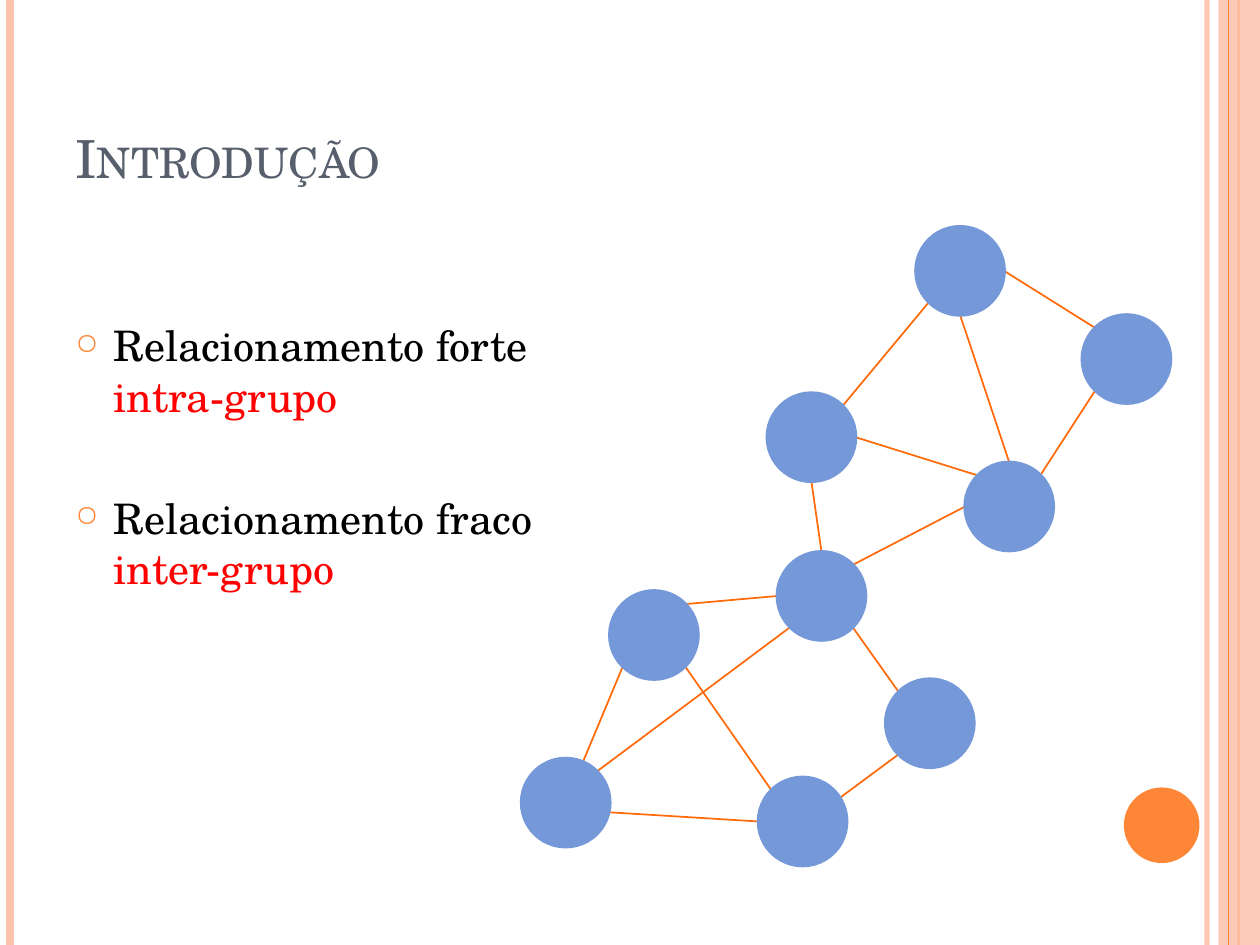
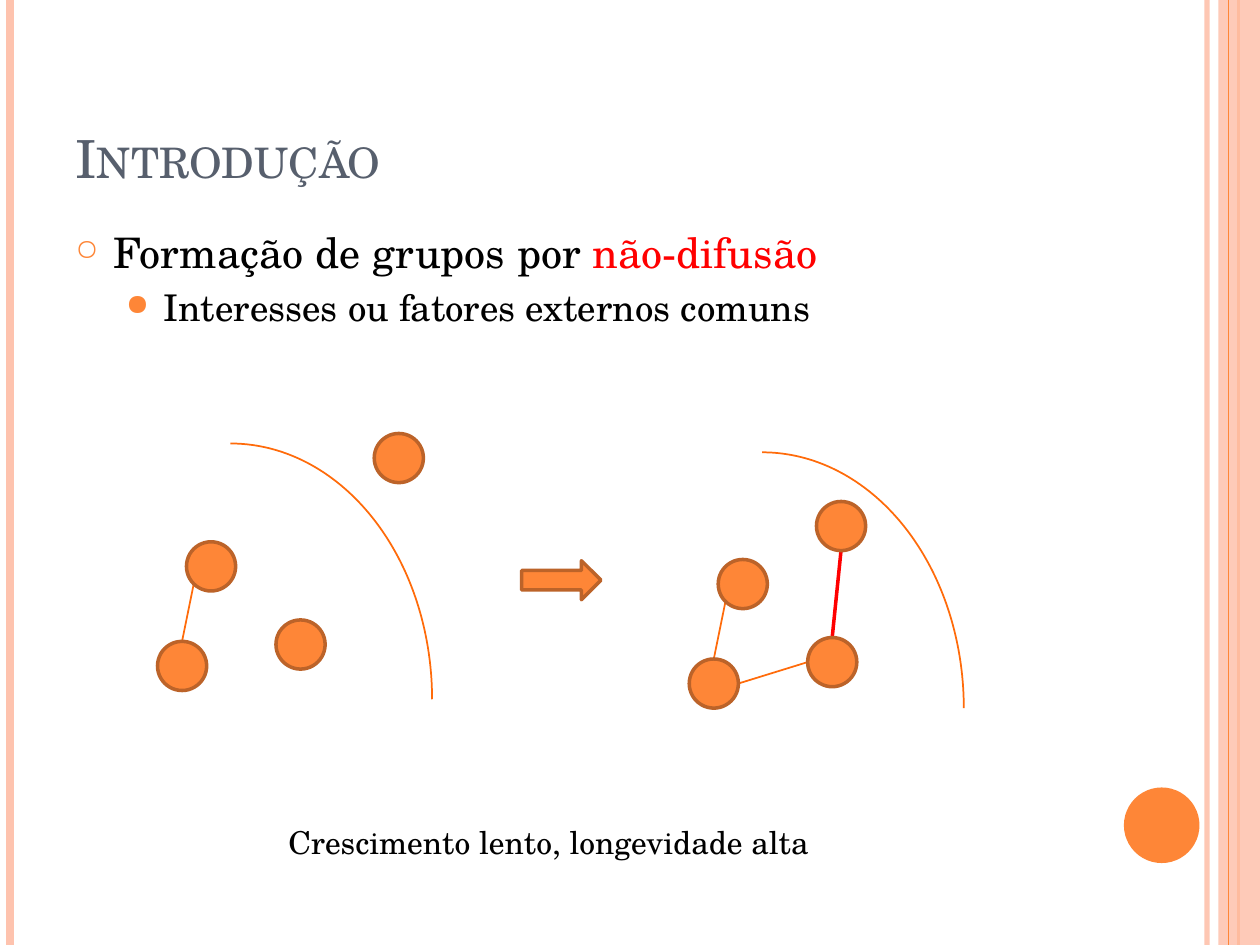
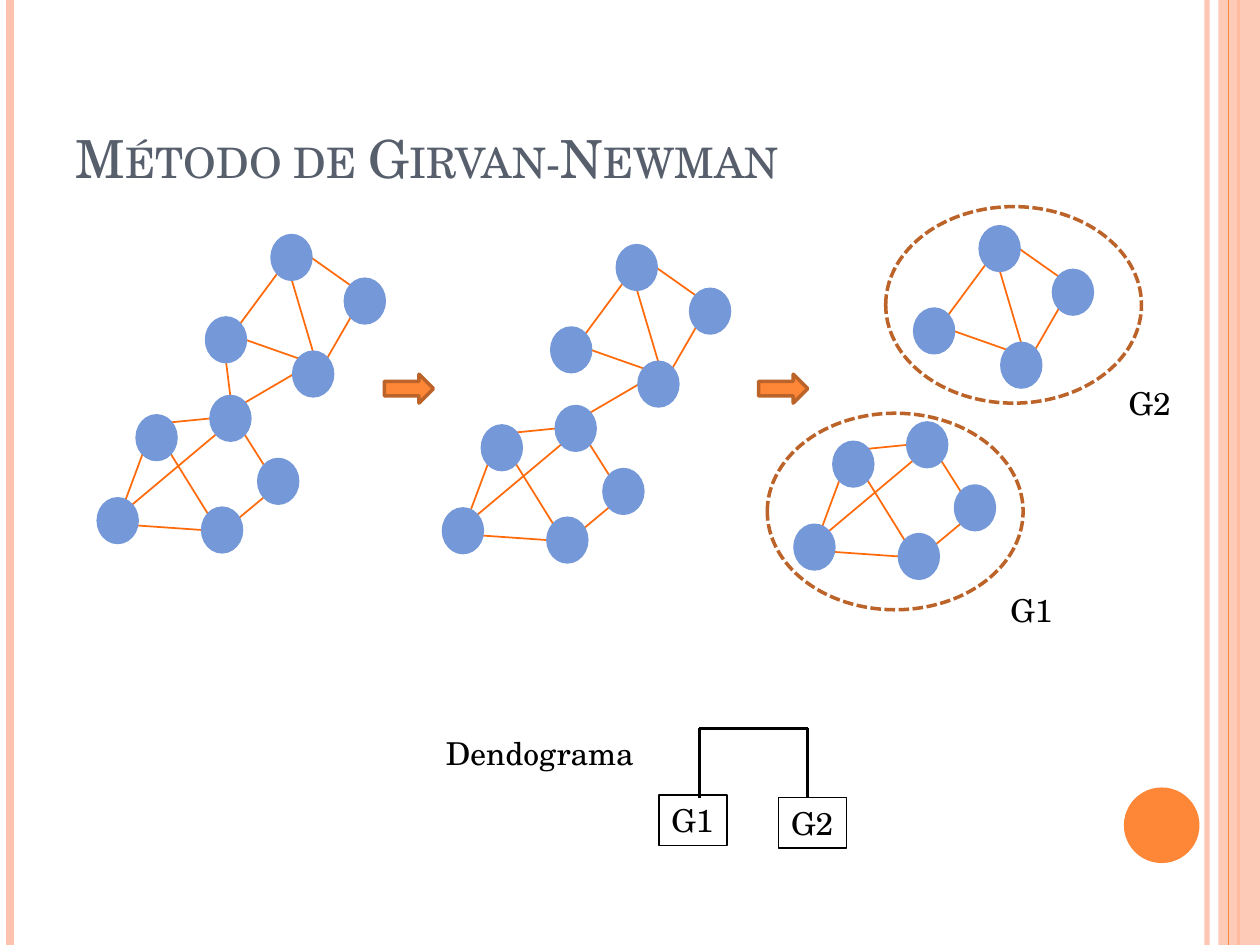
from pptx import Presentation, util as u
from pptx.dml import color as c
from pptx.enum import dml, shapes as kinds, text as texts
from pptx.oxml import ns, xmlchemy as xml

FONT = "TeX Gyre Schola"
ORANGE, DARK_ORANGE, EDGE_ORANGE, PEACH = "FE8637", "BC6329", "FF6B0A", "FEC3AE"
BLUE, SLATE, RED, BLACK = "7598D9", "575F6D", "FF0000", "000000"

SITES = {
    "N": (0.5, 0), "NE": (0.85, 0.15), "E": (1, 0.5), "SE": (0.85, 0.85),
    "S": (0.5, 1), "SW": (0.15, 0.85), "W": (0, 0.5), "NW": (0.15, 0.15),
    "NNE": (0.67, 0.1), "ESE": (1, 0.61), "inside": (0.56, 0.5),
}

NETWORK_SIZE = (5.15, 5.07)
NETWORK_NODE = 0.7
GROUP_1 = {"hub": (2.03, 2.58), "right": (2.89, 3.59), "upper": (0.7, 2.89),
           "lower": (0, 4.22), "bottom": (1.88, 4.37)}
GROUP_2 = {"west": (1.95, 1.32), "south": (3.52, 1.87),
           "north": (3.13, 0), "east": (4.45, 0.7)}
EDGES_1 = [
    ("upper", "SE", "bottom", "NW"), ("lower", "ESE", "bottom", "W"),
    ("upper", "NE", "hub", "W"), ("hub", "SE", "right", "NW"),
    ("bottom", "inside", "right", "SW"), ("upper", "SW", "lower", "NNE"),
    ("lower", "NE", "hub", "SW"),
]
EDGES_2 = [
    ("west", "NE", "north", "SW"), ("south", "N", "north", "S"),
    ("west", "E", "south", "NW"), ("north", "E", "east", "NW"),
    ("south", "NE", "east", "SW"),
]
STRONG_BRIDGE = ("hub", "NE", "south", "W")
WEAK_BRIDGE = ("west", "S", "hub", "N")


def rgb(value):
    return c.RGBColor.from_string(value)


def inches(values):
    return [u.Inches(value) for value in values]


def add_xml(parent, tag, **attributes):
    child = xml.OxmlElement(tag)
    for name, value in attributes.items():
        child.set(name, str(value))
    parent.append(child)
    return child


def set_alpha(shape, percent):
    for color in shape.element.spPr.iter(ns.qn("a:srgbClr")):
        add_xml(color, "a:alpha", val=percent * 1000)


def add_shape(container, kind, box, fill=None, line=None, width=2, dash=None):
    shape = container.add_shape(kind, *inches(box))
    shape.shadow.inherit = False
    if fill:
        shape.fill.solid()
        shape.fill.fore_color.rgb = rgb(fill)
    else:
        shape.fill.background()
    if line:
        shape.line.color.rgb = rgb(line)
        shape.line.width = u.Pt(width)
        if dash:
            shape.line.dash_style = dash
    else:
        shape.line.fill.background()
    return shape


def add_line(container, start, end, color=EDGE_ORANGE, width=1):
    connector = container.add_connector(
        kinds.MSO_CONNECTOR.STRAIGHT, *inches((*start, *end)))
    connector.line.color.rgb = rgb(color)
    connector.line.width = u.Pt(width)
    add_xml(connector.element.spPr, "a:effectLst")
    return connector


def write(paragraph, content, size=18, color=BLACK, small_caps=False):
    run = paragraph.add_run()
    run.text = content
    run.font.name = FONT
    run.font.size = u.Pt(size)
    run.font.color.rgb = rgb(color)
    if small_caps:
        run.font._element.set("cap", "small")


def add_label(slide, box, content, line=None):
    label = slide.shapes.add_textbox(*inches(box))
    label.text_frame.word_wrap = False
    label.text_frame.auto_size = texts.MSO_AUTO_SIZE.SHAPE_TO_FIT_TEXT
    write(label.text_frame.paragraphs[0], content)
    if line:
        label.line.color.rgb = rgb(line)
        label.line.width = u.Pt(0.75)


def add_bullets(slide, box, bullets):
    frame = slide.shapes.add_textbox(*inches(box)).text_frame
    frame.word_wrap = True
    for index, (level, before, runs) in enumerate(bullets):
        paragraph = frame.paragraphs[0] if index == 0 else frame.add_paragraph()
        paragraph.level = level
        paragraph.space_before = u.Pt(before)
        symbol, percent, margin, size = [("○", 70, 0.3, 24), ("●", 80, 0.7, 21)][level]
        properties = paragraph._p.get_or_add_pPr()
        properties.set("marL", str(u.Inches(margin)))
        properties.set("indent", str(u.Inches(-0.3)))
        add_xml(add_xml(properties, "a:buClr"), "a:srgbClr", val=ORANGE)
        add_xml(properties, "a:buSzPct", val=percent * 1000)
        add_xml(properties, "a:buChar", char=symbol)
        for content, color in runs:
            write(paragraph, content, size=size, color=color)


def add_bands(slide):
    container = slide.shapes

    def vertical(left, color, width):
        return add_line(container, (left, 0), (left, 7.5), color, width)

    inner = vertical(9.58, PEACH, 3)
    set_alpha(inner, 93)
    outer = vertical(0.08, PEACH, 4.5)
    covered = vertical(9.83, ORANGE, 1.5)
    band = add_shape(container, kinds.MSO_SHAPE.RECTANGLE, (9.67, 0, 0.33, 7.5), PEACH)
    set_alpha(band, 87)
    thin = vertical(9.75, ORANGE, 0.75)
    disc = add_shape(container, kinds.MSO_SHAPE.OVAL, (8.92, 6.25, 0.6, 0.6), ORANGE)
    for shape in (inner, outer, covered, band, thin, disc):
        slide.slide_layout.shapes.element.append(shape.element)


def add_titled_slide(presentation, title):
    slide = presentation.slides.add_slide(presentation.slide_layouts[5])
    shape = slide.shapes.title
    shape.left, shape.top, shape.width, shape.height = inches((0.5, 0.3, 8.17, 1.25))
    frame = shape.text_frame
    frame.auto_size = texts.MSO_AUTO_SIZE.NONE
    frame.vertical_anchor = texts.MSO_ANCHOR.BOTTOM
    frame.paragraphs[0].alignment = texts.PP_ALIGN.LEFT
    write(frame.paragraphs[0], title, size=30, color=SLATE, small_caps=True)
    return slide


def add_graph(container, box, design, node_size, nodes, edges, fill, line):
    left, top, width, height = box
    scale_x, scale_y = width / design[0], height / design[1]

    def point(name, site=(0, 0)):
        x, y = nodes[name]
        return (left + (x + site[0] * node_size) * scale_x,
                top + (y + site[1] * node_size) * scale_y)

    for start, start_site, end, end_site, *style in edges:
        add_line(container, point(start, SITES[start_site]),
                 point(end, SITES[end_site]), *style)
    for name in nodes:
        node_box = (*point(name), node_size * scale_x, node_size * scale_y)
        add_shape(container, kinds.MSO_SHAPE.OVAL, node_box, fill, line)


def add_network(container, box, nodes, edges):
    add_graph(container, box, NETWORK_SIZE, NETWORK_NODE, nodes, edges, BLUE, BLUE)


def add_arrow(slide, box):
    add_shape(slide.shapes, kinds.MSO_SHAPE.RIGHT_ARROW, box, ORANGE, DARK_ORANGE)


def add_circle_scene(slide, box, arc_top, outsider, extra_edges):
    left, top = box[:2]
    add_shape(slide.shapes, kinds.MSO_SHAPE.ARC,
              (left - 1.02, top + arc_top, 3.2, 4.06), line=EDGE_ORANGE, width=1)
    members = {"first": (0.23, 0.86), "second": (0.94, 1.48),
               "third": (0, 1.65), "outsider": outsider}
    edges = [("third", "N", "first", "SW"), *extra_edges]
    add_graph(slide.shapes, box, box[2:], 0.39, members, edges, ORANGE, DARK_ORANGE)


def add_dendrogram(slide, box):
    left, top = box[:2]
    add_label(slide, (left, top, 1.7, 0.4), "Dendograma")
    first, second = left + 2.11, left + 2.97
    for start, end in [((first, top), (second, top)),
                       ((first, top), (first, top + 0.55)),
                       ((second, top), (second, top + 0.55))]:
        add_line(slide.shapes, start, end, BLACK, 1.5)
    add_label(slide, (left + 1.79, top + 0.53, 0.54, 0.4), "G1", line=BLACK)
    add_label(slide, (left + 2.74, top + 0.55, 0.54, 0.4), "G2", line=BLACK)


def add_group_outline(slide, box, name):
    left, top, width, height = box
    add_shape(slide.shapes, kinds.MSO_SHAPE.OVAL, box,
              line=DARK_ORANGE, dash=dml.MSO_LINE.SQUARE_DOT)
    add_label(slide, (left + width - 0.2, top + height - 0.2, 0.54, 0.4), name)


def build_relationships(presentation):
    slide = add_titled_slide(presentation, "Introdução")
    add_bands(slide)
    add_network(slide.shapes, (4.14, 1.8, *NETWORK_SIZE), GROUP_1 | GROUP_2,
                [*EDGES_1, *EDGES_2, STRONG_BRIDGE, WEAK_BRIDGE])
    add_bullets(slide, (0.5, 2.49, 4.66, 4.85), [
        (0, 0, [("Relacionamento forte ", BLACK), ("intra-grupo", RED)]),
        (0, 41, [("Relacionamento fraco ", BLACK), ("inter-grupo", RED)]),
    ])


def build_formation(presentation):
    slide = add_titled_slide(presentation, "Introdução")
    add_bullets(slide, (0.5, 1.75, 8.17, 5.33), [
        (0, 6, [("Formação de grupos por ", BLACK), ("não-difusão", RED)]),
        (1, 4.2, [("Interesses ou fatores externos comuns", BLACK)]),
    ])
    add_circle_scene(slide, (1.25, 3.44, 2.11, 2.04), 0.08, (1.72, 0), [])
    add_circle_scene(slide, (5.47, 3.58, 2.11, 2.04), 0.01, (1.01, 0.4), [
        ("third", "E", "second", "W"),
        ("second", "N", "outsider", "S", RED, 2),
    ])
    add_arrow(slide, (4.14, 4.45, 0.63, 0.31))
    add_label(slide, (2.19, 6.48, 4.37, 0.4), "Crescimento lento, longevidade alta")


def build_method(presentation):
    slide = add_titled_slide(presentation, "Método de Girvan-Newman")
    size = (2.27, 2.51)
    everyone = GROUP_1 | GROUP_2
    remaining = [*EDGES_1, *EDGES_2, STRONG_BRIDGE]
    group = slide.shapes.add_group_shape()
    add_network(group.shapes, (0.78, 1.87, *size), everyone, [*remaining, WEAK_BRIDGE])
    add_network(slide.shapes, (3.52, 1.95, *size), everyone, remaining)
    add_network(slide.shapes, (6.31, 2.08, *size), GROUP_1, EDGES_1)
    add_network(slide.shapes, (6.4, 1.8, *size), GROUP_2, EDGES_2)
    for left in (3.05, 6.02):
        add_arrow(slide, (left, 2.97, 0.39, 0.23))
    add_group_outline(slide, (6.09, 3.28, 2.03, 1.56), "G1")
    add_group_outline(slide, (7.03, 1.64, 2.03, 1.56), "G2")
    add_dendrogram(slide, (3.44, 5.78, 3.28, 0.95))


def main():
    presentation = Presentation()
    presentation.slide_width, presentation.slide_height = inches((10, 7.5))
    for build in (build_relationships, build_formation, build_method):
        build(presentation)
    presentation.save("out.pptx")


if __name__ == "__main__":
    main()
